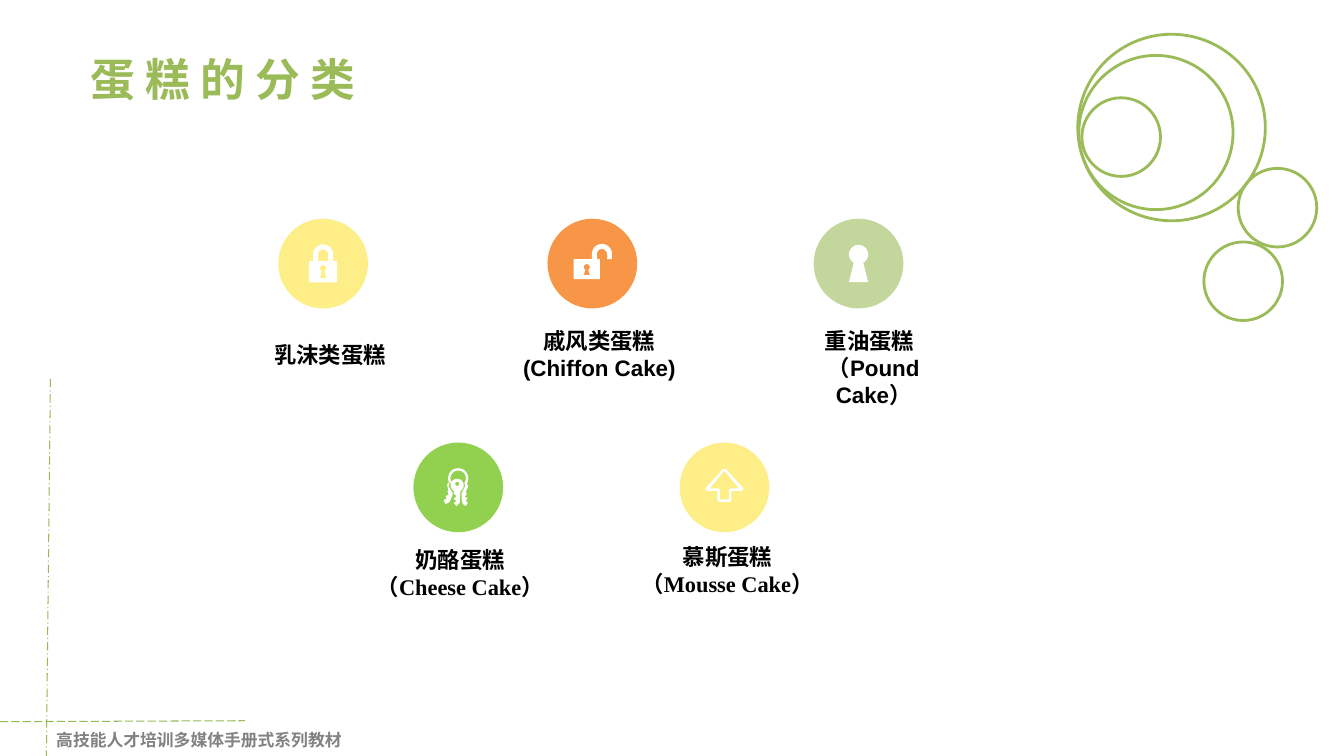
import math

from lxml import etree
from pptx import Presentation
from pptx import util as u
from pptx.dml.color import RGBColor
from pptx.enum import dml, shapes, text
from pptx.oxml import ns

GREEN = RGBColor(0x9B, 0xBB, 0x59)
GUIDE = RGBColor(0x98, 0xB9, 0x55)
GRAY = RGBColor(0x82, 0x82, 0x82)
BLACK = RGBColor(0, 0, 0)
WHITE = RGBColor(0xFF, 0xFF, 0xFF)
YELLOW = RGBColor(0xFE, 0xEE, 0x88)
ORANGE = RGBColor(0xF7, 0x96, 0x46)
PALE = RGBColor(0xC3, 0xD6, 0x9B)
LIME = RGBColor(0x92, 0xD0, 0x50)
BADGE = 0.89


def arc(cx, cy, r, start, end, steps=24):
    """Return points on a circle, with angles in degrees, clockwise."""
    angles = [math.radians(start + (end - start) * i / steps) for i in range(steps + 1)]
    return [(cx + r * math.cos(a), cy + r * math.sin(a)) for a in angles]


def keyhole(cx, top, r, height):
    """Return the contour of a keyhole."""
    foot = top + height
    return arc(cx, top + r, r, 120, 420) + [(cx + r, foot), (cx - r, foot)]


def mirrored(half):
    """Close a right-hand half contour with its mirror image."""
    return half + [(-x, y) for x, y in reversed(half)]


LOCK = [
    [(-.14, .185), (-.14, -.025), (-.1, -.025)] + arc(0, -.09, .1, 180, 360)
    + [(.1, -.025), (.14, -.025), (.14, .185)],
    arc(0, -.09, .05, 180, 360) + [(.05, -.025), (-.05, -.025)],
    keyhole(0, .015, .03, .13),
]
OPEN_LOCK = [
    [(-.185, .155), (-.185, -.045), (-.005, -.045)] + arc(.095, -.095, .1, 180, 360)
    + [(.195, -.045), (.145, -.045), (.15, -.07)] + arc(.095, -.095, .05, 360, 180)
    + [(.045, -.045), (.075, -.045), (.075, .155)],
    keyhole(-.055, .005, .03, .11),
]
KEYHOLE = [keyhole(0, -.185, .095, .37)]
KEYS = [
    arc(0, -.09, .1, 150, 390) + arc(0, -.09, .077, 390, 150),
    arc(-.01, -.02, .065, 120, 420)
    + [(.015, .155), (-.015, .185), (-.045, .155), (-.015, .135), (-.045, .115),
       (-.015, .085), (-.045, .065)],
    arc(-.01, -.035, .02, 0, 360),
    [(-.08, -.06), (-.11, -.03), (-.1, .02), (-.105, .045), (-.095, .075), (-.125, .085),
     (-.115, .115), (-.145, .125), (-.125, .165), (-.085, .145), (-.055, .075),
     (-.055, .055), (-.095, -.01)],
    [(.06, -.05), (.085, -.045), (.1, -.01), (.075, .045), (.085, .065), (.065, .095),
     (.095, .105), (.075, .135), (.095, .155), (.075, .185), (.045, .165), (.035, .125),
     (.035, .055), (.07, -.01)],
]
ARROW = [
    mirrored([(0, -.185), (.015, -.18), (.19, .01), (.175, .035), (.07, .035),
              (.07, .13), (.05, .145)]),
    mirrored([(0, -.165), (.145, .01), (.06, .01), (.045, .03), (.045, .12)]),
]


def add_text(s, box, lines, inset=0, **font):
    """Add a text box of one paragraph per line with the given font values."""
    tf = s.shapes.add_textbox(*map(u.Inches, box)).text_frame
    tf.word_wrap = True
    for side in ("left", "right", "top", "bottom"):
        setattr(tf, f"margin_{side}", u.Inches(inset if side in ("left", "right") else inset / 2))
    color = font.pop("color")
    align = font.pop("align", text.PP_ALIGN.LEFT)
    for i, line in enumerate(lines):
        p = tf.paragraphs[0] if i == 0 else tf.add_paragraph()
        p.alignment = align
        r = p.add_run()
        r.text = line[0] if isinstance(line, tuple) else line
        for key, value in font.items():
            setattr(r.font, key, value)
        if isinstance(line, tuple):
            r.font.name = line[1]
        r.font.color.rgb = color
    return tf


def add_circle(s, x, y, w, h, fill=None, line=None):
    """Add an ellipse that is either filled or outlined."""
    sp = s.shapes.add_shape(shapes.MSO_SHAPE.OVAL, *map(u.Inches, (x, y, w, h)))
    sp.shadow.inherit = False
    if fill is None:
        sp.fill.background()
        sp.line.color.rgb = line
        sp.line.width = u.Pt(2)
    else:
        sp.fill.solid()
        sp.fill.fore_color.rgb = fill
        sp.line.fill.background()


def add_icon(s, cx, cy, contours):
    """Draw white contours around a centre point."""
    paths = [[(round(x * 1000), round(y * 1000)) for x, y in c] for c in contours]
    fb = s.shapes.build_freeform(*paths[0][0], scale=914.4)
    for i, points in enumerate(paths):
        if i:
            fb.move_to(*points[0])
        fb.add_line_segments(points[1:], close=True)
    sp = fb.convert_to_shape(u.Inches(cx), u.Inches(cy))
    sp.shadow.inherit = False
    sp.fill.solid()
    sp.fill.fore_color.rgb = WHITE
    sp.line.fill.background()


def add_rings(s, x, y):
    """Draw the corner decoration of outlined circles."""
    for dx, dy, w, h in ((0, 0, 1.86, 1.85), (.01, .21, 1.53, 1.53), (1.59, 1.33, .78, .78),
                         (.04, .63, .78, .78), (1.25, 2.06, .78, .78)):
        add_circle(s, x + dx, y + dy, w, h, line=GREEN)


def add_guides(s):
    """Draw the two dashed guide lines at the lower left."""
    for ends, dash in (((.5, 3.76, .46, 7.5), dml.MSO_LINE.LONG_DASH_DOT),
                       ((0, 7.16, 2.43, 7.15), dml.MSO_LINE.LONG_DASH)):
        cn = s.shapes.add_connector(shapes.MSO_CONNECTOR.STRAIGHT, *map(u.Inches, ends))
        cn.line.color.rgb = GUIDE
        for key, value in {"width": u.Pt(.75), "dash_style": dash}.items():
            setattr(cn.line, key, value)
        etree.SubElement(cn._element.spPr, ns.qn("a:effectLst"))


def add_cake(s, x, y, fill, icon, labels):
    """Draw one badge with its icon and the labels below it."""
    add_circle(s, x, y, BADGE, BADGE, fill=fill)
    cx = x + BADGE / 2
    add_icon(s, cx, y + BADGE / 2, icon)
    for dx, dy, lines in labels:
        add_text(s, (cx + dx - .99, y + dy, 1.98, .27 * len(lines)), lines, size=u.Pt(16),
                 bold=True, name="Times New Roman", color=BLACK, align=text.PP_ALIGN.CENTER)


def build_slide(prs):
    """Build the cake categories slide."""
    s = prs.slides.add_slide(prs.slide_layouts[6])
    tf = add_text(s, (.7, .46, 3.08, .64), ["蛋 糕 的 分 类"], .1, size=u.Pt(32), bold=True,
                  name="Noto Sans CJK SC", color=GREEN)
    tf.margin_left = u.Inches(.2)
    add_rings(s, 10.69, .34)
    add_guides(s)
    add_text(s, (.46, 7.19, 3.06, .3), ["高技能人才培训多媒体手册式系列教材"], .1,
             size=u.Pt(12), bold=True, name="Times New Roman", color=GRAY)
    cakes = (
        (2.76, 2.17, YELLOW, LOCK, [(.07, 1.21, [("乳沫类蛋糕", "Arial")])]),
        (5.43, 2.17, ORANGE, OPEN_LOCK,
         [(.07, 1.08, ["戚风类蛋糕", ("(Chiffon Cake)", "Arial")])]),
        (8.07, 2.17, PALE, KEYHOLE,
         [(.11, 1.08, [("重油蛋糕", "Arial")]),
          (.15, 1.34, [("（Pound", "Arial"), ("Cake）", "Arial")])]),
        (4.1, 4.39, LIME, KEYS, [(.02, 1.03, ["奶酪蛋糕", "（Cheese Cake）"])]),
        (6.74, 4.39, YELLOW, ARROW, [(.03, 1, ["慕斯蛋糕", "（Mousse Cake）"])]),
    )
    for cake in cakes:
        add_cake(s, *cake)


def main():
    """Create and save the presentation."""
    prs = Presentation()
    prs.slide_width, prs.slide_height = u.Inches(13.33), u.Inches(7.5)
    build_slide(prs)
    prs.save("out.pptx")


if __name__ == "__main__":
    main()
